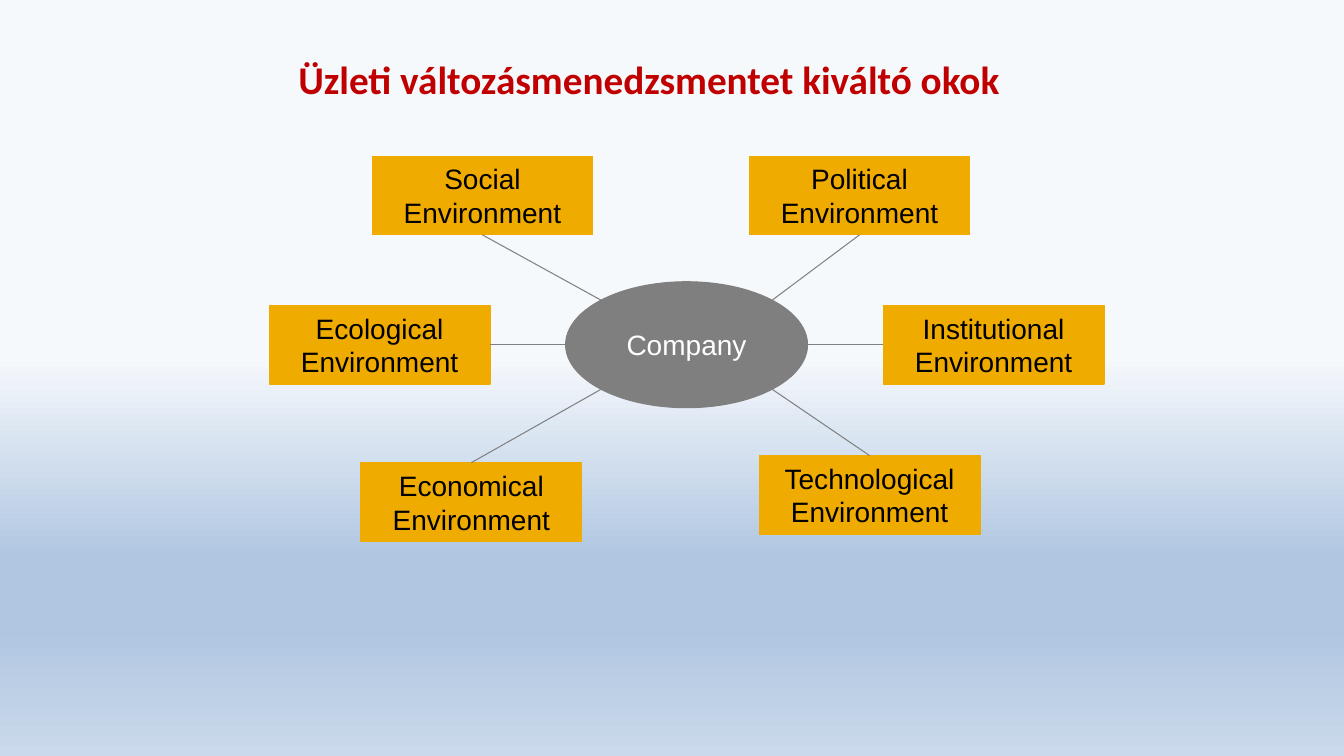
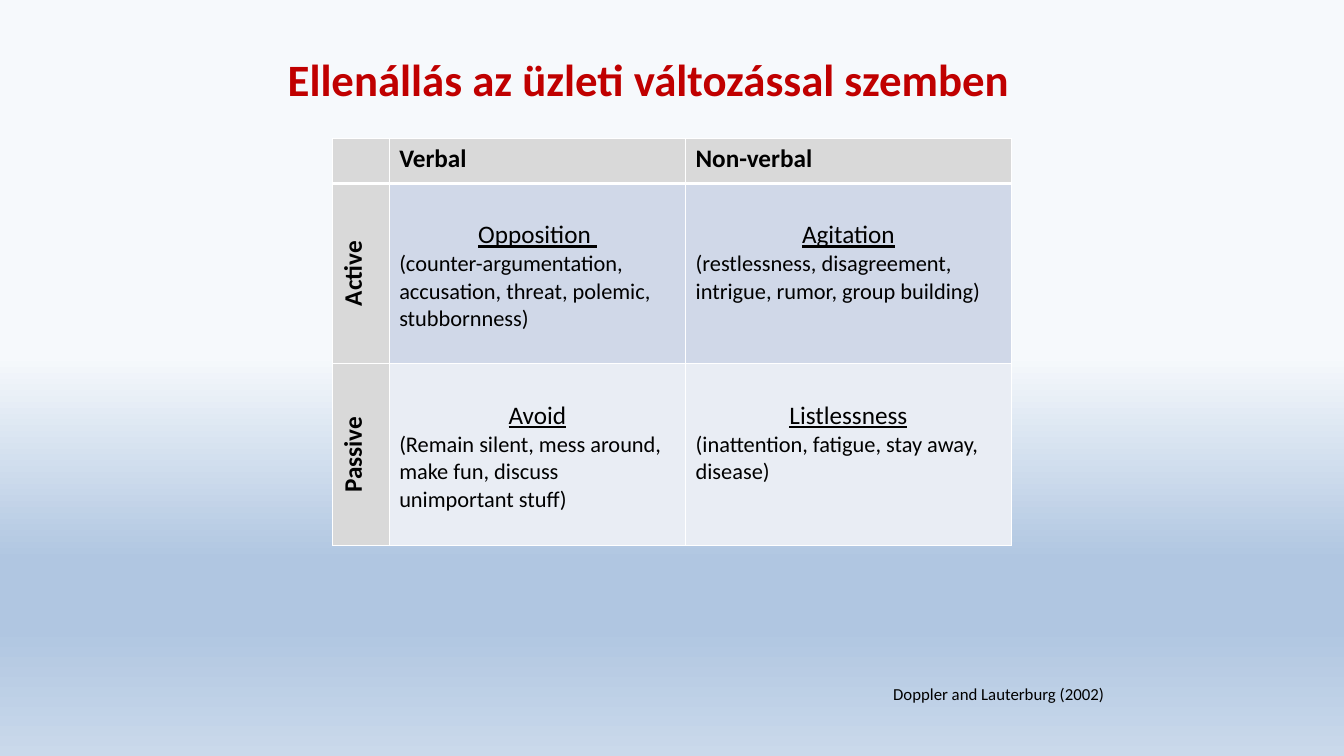
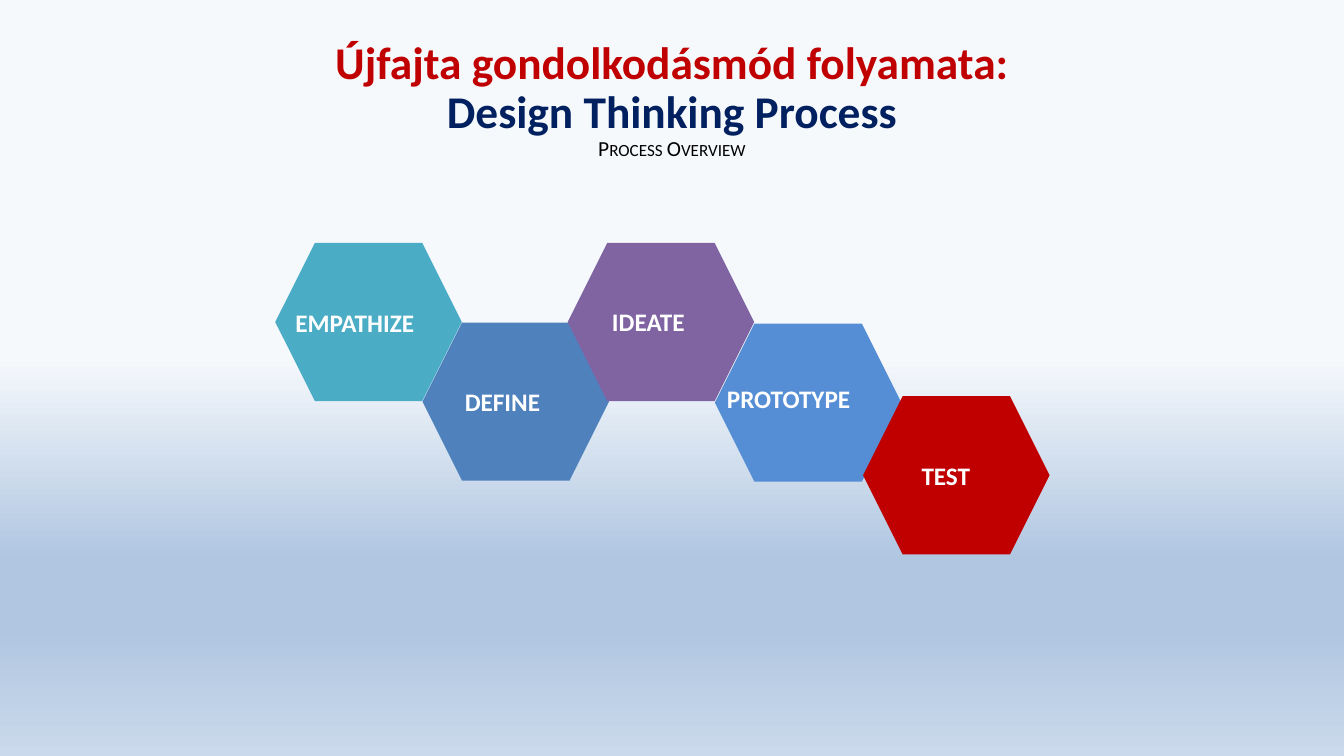
import math

import lxml.etree
import pptx
import pptx.dml.color
import pptx.enum.dml
import pptx.enum.shapes
import pptx.enum.text
import pptx.oxml.ns
import pptx.util

Inches = pptx.util.Inches
Pt = pptx.util.Pt
qn = pptx.oxml.ns.qn
SHAPES = pptx.enum.shapes.MSO_SHAPE
CENTER = pptx.enum.text.PP_ALIGN.CENTER
LEFT = pptx.enum.text.PP_ALIGN.LEFT
MIDDLE = pptx.enum.text.MSO_ANCHOR.MIDDLE
TOP = pptx.enum.text.MSO_ANCHOR.TOP

RED, NAVY, BLACK, WHITE = "C00000", "002060", "000000", "FFFFFF"
GREY, AMBER, LINE_GREY, HEADER_GREY = "7F7F7F", "F0AB00", "808080", "D9D9D9"
BACKGROUND_STOPS = [(47, "F6F9FC"), (74, "B0C6E1"), (83, "B0C6E1"), (100, "CAD9EB")]
TITLE_BOX = (0.92, 0.19, 11.03, 1.25)


def color(value):
    return pptx.dml.color.RGBColor.from_string(value)


def style(paragraph, size, value=BLACK, bold=False, align=LEFT, name="Calibri"):
    paragraph.alignment = align
    font = paragraph.font
    font.name, font.size, font.bold = name, Pt(size), bold
    font.color.rgb = color(value)


def set_background(master):
    fill = master.background.fill
    fill.gradient()
    fill.gradient_angle = 270
    stops = master.element.find(".//" + qn("a:gsLst"))
    for stop in list(stops):
        stops.remove(stop)
    for position, value in BACKGROUND_STOPS:
        stop = lxml.etree.SubElement(stops, qn("a:gs"), pos=str(position * 1000))
        lxml.etree.SubElement(stop, qn("a:srgbClr"), val=value)


def add_text_box(slide, box, text, anchor=TOP, inset=None):
    shape = slide.shapes.add_textbox(*map(Inches, box))
    frame = shape.text_frame
    frame.word_wrap = True
    frame.vertical_anchor = anchor
    if inset is not None:
        frame.margin_left = frame.margin_right = Inches(inset)
        frame.margin_top = frame.margin_bottom = Inches(inset)
    frame.text = text
    return frame


def add_title(slide, text, size, box=TITLE_BOX):
    frame = add_text_box(slide, box, text, MIDDLE)
    for paragraph in frame.paragraphs:
        style(paragraph, size, RED, True, CENTER)
        paragraph.line_spacing = 0.9
    return frame


def add_filled_shape(slide, kind, box, fill, outline=False):
    shape = slide.shapes.add_shape(kind, *map(Inches, box))
    shape.shadow.inherit = False
    shape.fill.solid()
    shape.fill.fore_color.rgb = color(fill)
    if outline:
        shape.line.color.rgb = color(fill)
        shape.line.width = Pt(0.75)
    else:
        shape.line.fill.background()
    return shape


def add_node(slide, kind, box, text, fill, text_color):
    shape = add_filled_shape(slide, kind, box, fill, outline=True)
    shape.text_frame.word_wrap = True
    shape.text_frame.vertical_anchor = MIDDLE
    shape.text_frame.text = text
    style(shape.text_frame.paragraphs[0], 20, text_color, align=CENTER, name="Arial")
    return shape


def add_environment_map(slide, left, top):
    # Company in the centre
    width, height = 2.4, 1.25
    center_x, center_y = left + 4.14, top + 1.87
    add_node(slide, SHAPES.OVAL,
             (center_x - width / 2, center_y - height / 2, width, height),
             "Company", GREY, WHITE)

    # Environment boxes: offset, connected side, angle on the ellipse
    environments = [
        ("Social", 1.02, 0, 2, 225),
        ("Ecological", 0, 1.48, 3, 180),
        ("Economical", 0.91, 3.04, 0, 135),
        ("Political", 4.76, 0, 2, 315),
        ("Institutional", 6.09, 1.48, 1, 0),
        ("Technological", 4.86, 2.97, 0, 45),
    ]
    for name, x, y, side, angle in environments:
        node = add_node(slide, SHAPES.RECTANGLE, (left + x, top + y, 2.19, 0.78),
                        name + " Environment", AMBER, BLACK)
        end_x = Inches(center_x + width / 2 * math.cos(math.radians(angle)))
        end_y = Inches(center_y + height / 2 * math.sin(math.radians(angle)))
        connector = slide.shapes.add_connector(
            pptx.enum.shapes.MSO_CONNECTOR.STRAIGHT, end_x, end_y, end_x, end_y)
        connector.begin_connect(node, side)
        connector.line.color.rgb = color(LINE_GREY)
        connector.line.width = Pt(0.75)
        lxml.etree.SubElement(connector.element.spPr, qn("a:effectLst"))


def style_cell(cell, fill, bottom_width=1):
    properties = cell._tc.get_or_add_tcPr()
    for edge, width in (("L", 1), ("R", 1), ("T", 1), ("B", bottom_width)):
        line = lxml.etree.SubElement(properties, qn("a:ln" + edge), w=str(Pt(width)))
        solid = lxml.etree.SubElement(line, qn("a:solidFill"))
        lxml.etree.SubElement(solid, qn("a:srgbClr"), val=WHITE)
    cell.fill.solid()
    cell.fill.fore_color.rgb = color(fill)


def add_resistance_table(slide, left, top):
    columns, rows = (0.56, 2.94, 3.23), (0.45, 1.79, 1.8)
    table = slide.shapes.add_table(
        3, 3, Inches(left), Inches(top), Inches(sum(columns)), Inches(sum(rows))).table
    table.first_row = table.horz_banding = False
    for column, width in zip(table.columns, columns):
        column.width = Inches(width)
    for row, height in zip(table.rows, rows):
        row.height = Inches(height)

    # Header row
    for index, heading in enumerate(("", "Verbal", "Non-verbal")):
        cell = table.cell(0, index)
        style_cell(cell, HEADER_GREY, bottom_width=3)
        cell.text = heading
        style(cell.text_frame.paragraphs[0], 18, bold=True)

    # Rows with a turned heading and two reactions
    body = [
        ("Active", "D0D8E8", [
            ("Opposition ", "(counter-argumentation, accusation, threat, polemic, stubbornness)"),
            ("Agitation", "(restlessness, disagreement, intrigue, rumor, group building)")]),
        ("Passive", "E9EDF4", [
            ("Avoid", "(Remain silent, mess around, make fun, discuss unimportant stuff)"),
            ("Listlessness", "(inattention, fatigue, stay away, disease)")]),
    ]
    for row, (heading, fill, reactions) in enumerate(body, 1):
        cell = table.cell(row, 0)
        style_cell(cell, HEADER_GREY)
        cell.text = heading
        cell.vertical_anchor = MIDDLE
        cell._tc.get_or_add_tcPr().set("vert", "vert270")
        style(cell.text_frame.paragraphs[0], 18, bold=True, align=CENTER)
        for column, (reaction, examples) in enumerate(reactions, 1):
            cell = table.cell(row, column)
            style_cell(cell, fill)
            cell.margin_top = Inches(0.36)
            cell.text = reaction + "\n" + examples
            name_line, examples_line = cell.text_frame.paragraphs
            style(name_line, 18, align=CENTER)
            name_line.font.underline = True
            style(examples_line, 16)


def add_process(slide, left, top):
    # Hexagon offset, then label offset and width within the hexagon
    steps = [
        ("EMPATHIZE", "4BACC6", 0, 0, 0.2, 0.64, 1.46),
        ("DEFINE", "4F81BD", 1.46, 0.79, 0.42, 0.63, 1.46),
        ("IDEATE", "8064A2", 2.9, 0, 0.44, 0.63, 1.46),
        ("PROTOTYPE", "558ED5", 4.36, 0.8, 0.12, 0.59, 1.74),
        ("TEST", RED, 5.83, 1.52, 0.58, 0.64, 1.06),
    ]
    for _, fill, x, y, *_ in steps:
        add_filled_shape(slide, SHAPES.HEXAGON, (left + x, top + y, 1.85, 1.57), fill)
    for name, _, x, y, label_x, label_y, width in steps:
        box = (left + x + label_x, top + y + label_y, width, 0.3)
        frame = add_text_box(slide, box, name, inset=0)
        style(frame.paragraphs[0], 18, WHITE, True)


def main():
    presentation = pptx.Presentation()
    presentation.slide_width = Inches(13.33)
    presentation.slide_height = Inches(7.5)
    set_background(presentation.slide_master)
    blank = presentation.slide_layouts[6]

    # Causes of change
    slide = presentation.slides.add_slide(blank)
    add_title(slide, "Üzleti változásmenedzsmentet kiváltó okok", 28)
    add_environment_map(slide, 2.67, 1.55)

    # Resistance to change
    slide = presentation.slides.add_slide(blank)
    add_title(slide, "Ellenállás az üzleti változással szemben", 32)
    add_resistance_table(slide, 3.3, 1.37)
    source = add_text_box(slide, (8.76, 6.73, 2.58, 0.3), "Doppler and Lauterburg (2002)")
    style(source.paragraphs[0], 12)

    # Design thinking
    slide = presentation.slides.add_slide(blank)
    title = add_title(
        slide,
        "Újfajta gondolkodásmód folyamata:\nDesign Thinking Process\nProcess Overview",
        32.4, (2.02, 0.39, 9.29, 1.22))
    _, process_line, overview_line = title.paragraphs
    process_line.font.color.rgb = color(NAVY)
    style(overview_line, 15.3, align=CENTER)
    overview_line.runs[0]._r.get_or_add_rPr().set("cap", "small")
    add_process(slide, 2.73, 2.41)

    presentation.save("out.pptx")


if __name__ == "__main__":
    main()
